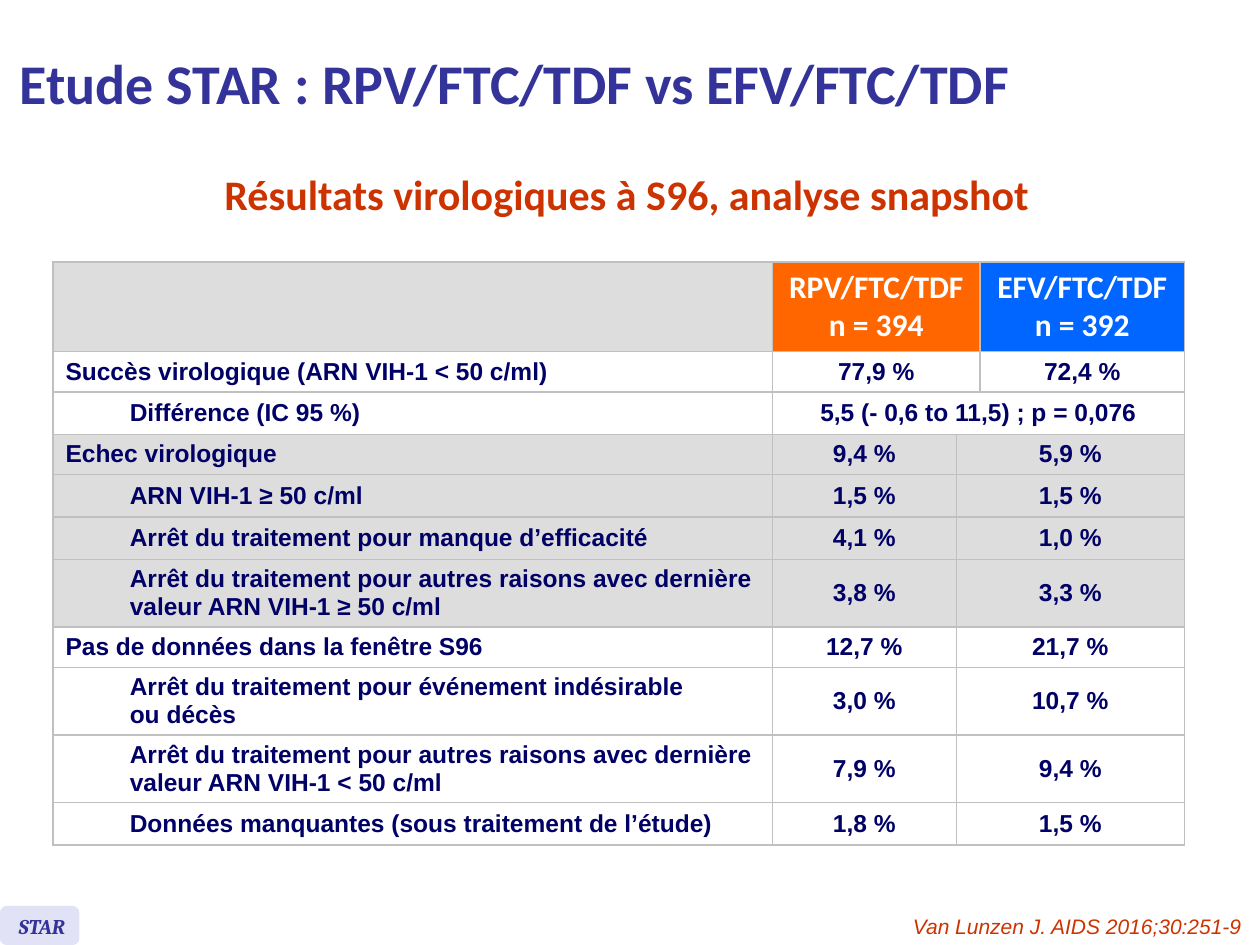
from lxml import etree
from pptx import Presentation
from pptx.dml.color import RGBColor
from pptx.enum.shapes import MSO_SHAPE
from pptx.enum.text import MSO_ANCHOR, PP_ALIGN
from pptx.oxml.ns import qn
from pptx.util import Inches, Pt

WHITE = RGBColor(0xFF, 0xFF, 0xFF)
GREY = RGBColor(0xDD, 0xDD, 0xDD)
BORDER = RGBColor(0xC0, 0xC0, 0xC0)
ORANGE = RGBColor(0xFF, 0x66, 0x00)
BLUE = RGBColor(0x00, 0x66, 0xFF)
NAVY = RGBColor(0x00, 0x00, 0x66)
INDIGO = RGBColor(0x33, 0x33, 0x99)
LAVENDER = RGBColor(0xE2, 0xE2, 0xF6)
RED = RGBColor(0xCC, 0x33, 0x00)

prs = Presentation()
prs.slide_width, prs.slide_height = Inches(10), Inches(7.5)
U = prs.slide_width // 100
s = prs.slides.add_slide(prs.slide_layouts[6])


def write(p, text, size, font, color, align=PP_ALIGN.LEFT, bold=True, italic=False):
    p.alignment = align
    for i, line in enumerate(text.split("\n")):
        if i:
            p.add_line_break()
        r = p.add_run()
        r.text = line
        r.font.size, r.font.name = Pt(size), font
        r.font.bold, r.font.italic = bold, italic
        r.font.color.rgb = color


def style_cell(cell, fill, open_side=None):
    cell.fill.solid()
    cell.fill.fore_color.rgb = fill
    cell.vertical_anchor = MSO_ANCHOR.MIDDLE
    tcPr = cell._tc.get_or_add_tcPr()
    for i, side in enumerate(("lnL", "lnR", "lnT", "lnB")):
        ln = etree.Element(qn("a:" + side), w=str(Pt(1)))
        if side == open_side:
            etree.SubElement(ln, qn("a:noFill"))
        else:
            solid = etree.SubElement(ln, qn("a:solidFill"))
            etree.SubElement(solid, qn("a:srgbClr"), val=str(BORDER))
        tcPr.insert(i, ln)


rows = [
    (0, "Succès virologique (ARN VIH-1 < 50 c/ml)", ["77,9 %", "72,4 %"], WHITE),
    (1, "Différence (IC 95 %)", ["5,5 (- 0,6 to 11,5) ; p = 0,076"], WHITE),
    (0, "Echec virologique", ["9,4 %", "5,9 %"], GREY),
    (1, "ARN VIH-1 ≥ 50 c/ml", ["1,5 %", "1,5 %"], GREY),
    (1, "Arrêt du traitement pour manque d’efficacité", ["4,1 %", "1,0 %"], GREY),
    (1, "Arrêt du traitement pour autres raisons avec dernière valeur ARN VIH-1 ≥ 50 c/ml",
     ["3,8 %", "3,3 %"], GREY),
    (0, "Pas de données dans la fenêtre S96", ["12,7 %", "21,7 %"], WHITE),
    (1, "Arrêt du traitement pour événement indésirable \nou décès", ["3,0 %", "10,7 %"], WHITE),
    (1, "Arrêt du traitement pour autres raisons avec dernière valeur ARN VIH-1 < 50 c/ml",
     ["7,9 %", "9,4 %"], WHITE),
    (1, "Données manquantes (sous traitement de l’étude)", ["1,8 %", "1,5 %"], WHITE),
]
col_widths = [5.1, 52, 14.6, 1.9, 16.2]

frame = s.shapes.add_table(len(rows) + 1, len(col_widths), int(4.2 * U), int(20.8 * U),
                           int(sum(col_widths) * U), 32 * U)
table = frame.table
table.first_row = table.horz_banding = False
for col, width in zip(table.columns, col_widths):
    col.width = int(width * U)
for i, row in enumerate(table.rows):
    row.height = int((2.8 if i else 4) * U)

for c, fill in enumerate((GREY, GREY, ORANGE, ORANGE, BLUE)):
    style_cell(table.cell(0, c), fill)
for first in (0, 2):
    table.cell(0, first).merge(table.cell(0, first + 1))
for c, arm, n in ((2, "RPV/FTC/TDF", "n = 394"), (4, "EFV/FTC/TDF", "n = 392")):
    tf = table.cell(0, c).text_frame
    write(tf.paragraphs[0], arm, 18, "Calibri", WHITE, PP_ALIGN.CENTER)
    write(tf.add_paragraph(), n, 18, "Calibri", WHITE, PP_ALIGN.CENTER)

for i, (level, label, values, fill) in enumerate(rows, 1):
    cells = [table.cell(i, c) for c in range(len(col_widths))]
    for c, cell in enumerate(cells):
        style_cell(cell, fill, {0: "lnR", 1: "lnL"}.get(c) if level else None)
        end = etree.SubElement(cell.text_frame.paragraphs[0]._p, qn("a:endParaRPr"))
        end.set("sz", "1400")
    if not level:
        cells[0].merge(cells[1])
    if len(values) == 1:
        cells[2].merge(cells[4])
        starts = [2]
    elif i == 1:
        cells[2].merge(cells[3])
        starts = [2, 4]
    else:
        cells[3].merge(cells[4])
        starts = [2, 3]
    write(cells[level].text_frame.paragraphs[0], label, 14, "Arial", NAVY)
    for c, value in zip(starts, values):
        write(cells[c].text_frame.paragraphs[0], value, 14, "Arial", NAVY, PP_ALIGN.CENTER)

badge = s.shapes.add_shape(MSO_SHAPE.ROUNDED_RECTANGLE, 0, int(71.9 * U), int(6.3 * U), int(3.1 * U))
badge.shadow.inherit = False
badge.fill.solid()
badge.fill.fore_color.rgb = LAVENDER
badge.line.fill.background()

texts = [
    ((0.4, 13.7, 98.7, 5.1), "Résultats virologiques à S96, analyse snapshot",
     24, "Calibri", RED, PP_ALIGN.CENTER, True, False, MSO_ANCHOR.TOP, Pt(22.8)),
    ((0.5, 72, 6.1, 3), "STAR",
     12, "Cambria", INDIGO, PP_ALIGN.LEFT, True, True, MSO_ANCHOR.TOP, None),
    ((70, 72, 30, 3), "Van Lunzen J. AIDS 2016;30:251-9 ",
     12, "Arial", RED, PP_ALIGN.RIGHT, False, True, MSO_ANCHOR.TOP, None),
    ((0.6, 0.5, 95.5, 12.1), "Etude STAR : RPV/FTC/TDF vs EFV/FTC/TDF",
     32, "Calibri", INDIGO, PP_ALIGN.LEFT, True, False, MSO_ANCHOR.MIDDLE, None),
]
for place, text, size, font, color, align, bold, italic, anchor, spacing in texts:
    tf = s.shapes.add_textbox(*(int(v * U) for v in place)).text_frame
    tf.word_wrap = True
    tf.vertical_anchor = anchor
    p = tf.paragraphs[0]
    p.line_spacing = spacing
    write(p, text, size, font, color, align, bold, italic)

prs.save("out.pptx")
